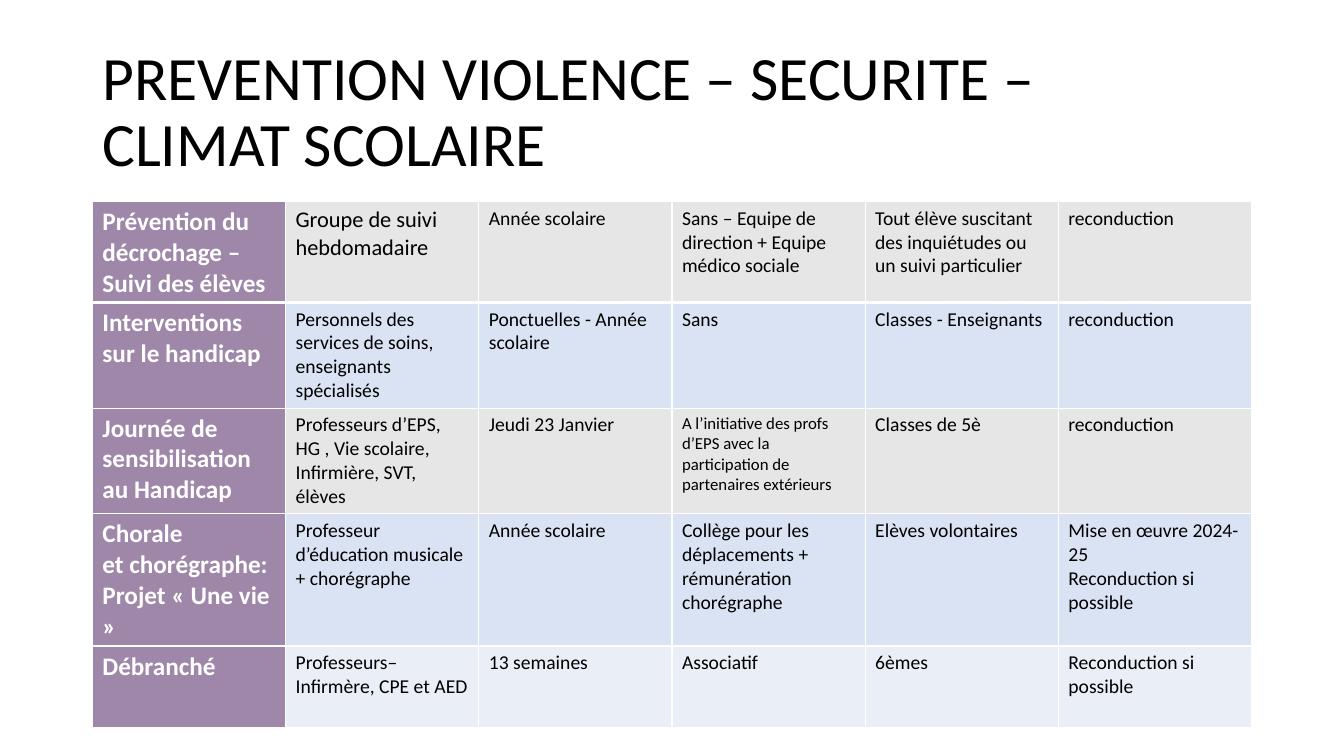
from lxml import etree
from pptx import Presentation
from pptx.dml.color import RGBColor
from pptx.enum.text import MSO_ANCHOR
from pptx.oxml.ns import qn
from pptx.util import Pt

MIDDLE = MSO_ANCHOR.MIDDLE
FONT = "Calibri"
COLORS = {
    "text": "000000",
    "white": "FFFFFF",
    "purple": "9E87A9",
    "grey": "E7E6E6",
    "blue": "DAE3F3",
    "pale": "EAEFF7",
}

TITLE_LINES = ["PREVENTION VIOLENCE – SECURITE –", "CLIMAT SCOLAIRE"]

# Each row: height, fill of the body cells, texts
ACTIONS = [
    (72, "grey", ["Prévention du décrochage – Suivi des élèves",
                  "Groupe de suivi hebdomadaire",
                  "Année scolaire",
                  "Sans – Equipe de direction + Equipe médico sociale",
                  "Tout élève suscitant des inquiétudes ou un suivi particulier",
                  "reconduction"]),
    (75.5, "blue", ["Interventions sur le handicap",
                    "Personnels des services de soins, enseignants spécialisés",
                    "Ponctuelles - Année scolaire",
                    "Sans",
                    "Classes - Enseignants",
                    "reconduction"]),
    (75.5, "grey", ["Journée de sensibilisation au Handicap",
                    "Professeurs d’EPS, HG , Vie scolaire, Infirmière, SVT, élèves",
                    "Jeudi 23 Janvier",
                    "A l’initiative des profs d’EPS avec la participation de "
                    "partenaires extérieurs",
                    "Classes de 5è",
                    "reconduction"]),
    (94.5, "blue", ["Chorale\net chorégraphe: Projet « Une vie »",
                    "Professeur d’éducation musicale\n+ chorégraphe",
                    "Année scolaire",
                    "Collège pour les déplacements + rémunération chorégraphe",
                    "Elèves volontaires",
                    "Mise en œuvre 2024-25\nReconduction si possible"]),
    (58.5, "pale", ["Débranché",
                    "Professeurs– Infirmère, CPE et AED",
                    "13 semaines",
                    "Associatif",
                    "6èmes",
                    "Reconduction si possible"]),
]
HEADING_SIZE = 18
BODY_SIZE = 14
SPECIAL_SIZES = {(0, 1): 16, (2, 3): 12}


def color(name):
    return RGBColor.from_string(COLORS[name])


def format_run(run, size, color_name, bold=False):
    run.font.name = FONT
    run.font.size = Pt(size)
    run.font.bold = bold
    run.font.color.rgb = color(color_name)


def set_borders(cell, widths):
    properties = cell._tc.get_or_add_tcPr()
    for side, width in widths.items():
        line = etree.SubElement(properties, qn(f"a:ln{side}"), w=str(Pt(width)))
        fill = etree.SubElement(line, qn("a:solidFill"))
        etree.SubElement(fill, qn("a:srgbClr"), val=COLORS["white"])


def add_title(slide, left, top, width, height):
    shape = slide.shapes.add_textbox(Pt(left), Pt(top), Pt(width), Pt(height))
    text_frame = shape.text_frame
    text_frame.word_wrap = True
    text_frame.vertical_anchor = MIDDLE
    paragraph = text_frame.paragraphs[0]
    paragraph.line_spacing = 0.9
    for index, text in enumerate(TITLE_LINES):
        if index:
            paragraph.add_line_break()
        run = paragraph.add_run()
        run.text = text
        format_run(run, 44, "text")


def fill_cell(cell, text, size, text_color, fill_color, bold):
    cell.text_frame.text = text
    for paragraph in cell.text_frame.paragraphs:
        for run in paragraph.runs:
            format_run(run, size, text_color, bold)
    cell.fill.solid()
    cell.fill.fore_color.rgb = color(fill_color)


def add_actions_table(slide, left, top, width):
    column_count = len(ACTIONS[0][2])
    height = sum(row_height for row_height, _, _ in ACTIONS)
    table = slide.shapes.add_table(
        len(ACTIONS), column_count, Pt(left), Pt(top), Pt(width), Pt(height)).table
    for column in table.columns:
        column.width = Pt(width / column_count)

    for row, (row_height, row_fill, texts) in enumerate(ACTIONS):
        table.rows[row].height = Pt(row_height)
        # A thicker rule separates the first row from the others
        top_width = 3 if row == 1 else 1
        bottom_width = 3 if row == 0 else 1
        for column, text in enumerate(texts):
            cell = table.cell(row, column)
            set_borders(cell, {"L": 1, "R": 1, "T": top_width, "B": bottom_width})
            if column == 0:
                fill_cell(cell, text, HEADING_SIZE, "white", "purple", True)
            else:
                size = SPECIAL_SIZES.get((row, column), BODY_SIZE)
                fill_cell(cell, text, size, "text", row_fill, False)


def main():
    presentation = Presentation()
    presentation.slide_width = Pt(960)
    presentation.slide_height = Pt(540)
    slide = presentation.slides.add_slide(presentation.slide_layouts[6])
    add_title(slide, 66, 28.75, 828, 104.5)
    add_actions_table(slide, 66, 144, 828)
    presentation.save("out.pptx")


if __name__ == "__main__":
    main()
